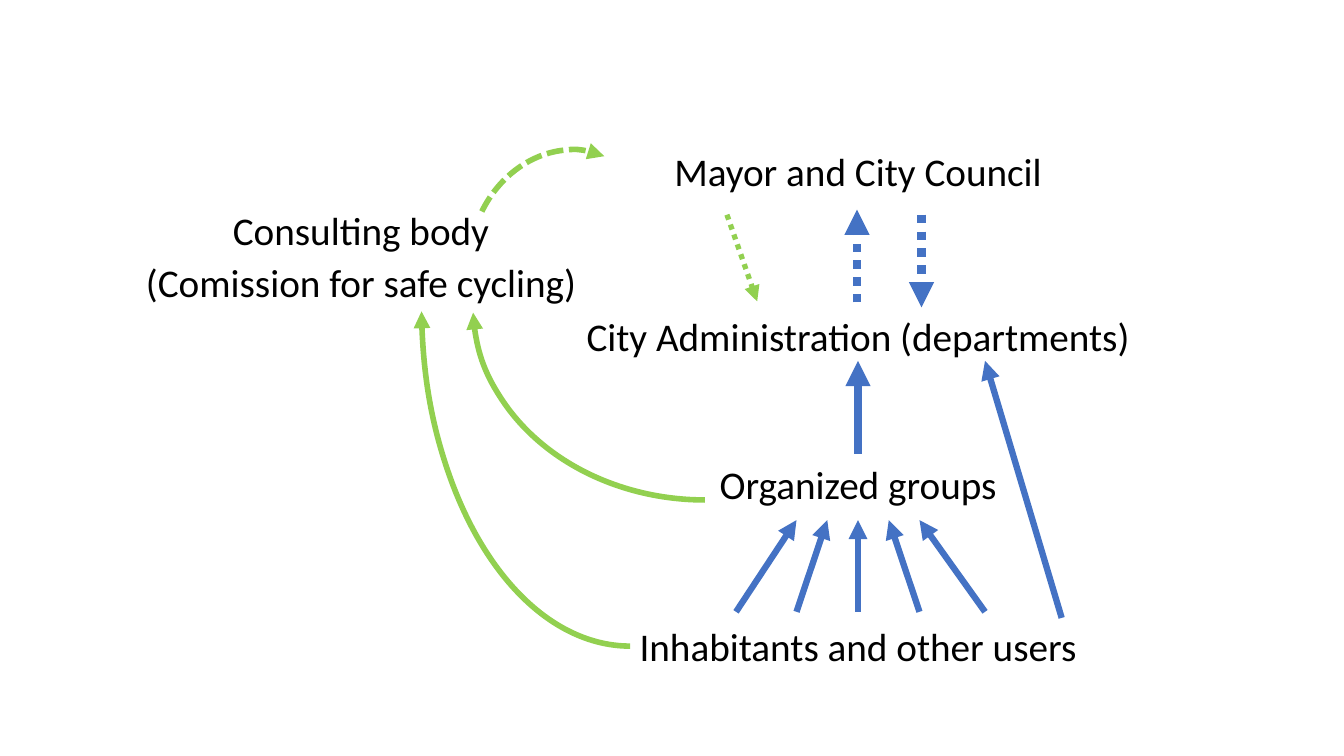
from collections import namedtuple
from dataclasses import dataclass

from pptx import Presentation
from pptx.dml.color import RGBColor
from pptx.enum.dml import MSO_LINE
from pptx.enum.shapes import MSO_CONNECTOR, MSO_SHAPE
from pptx.enum.text import MSO_ANCHOR, MSO_AUTO_SIZE, PP_ALIGN
from pptx.oxml.ns import qn
from pptx.oxml.xmlchemy import OxmlElement
from pptx.util import Inches, Pt

Box = namedtuple("Box", "left top width height")


@dataclass(frozen=True)
class Theme:
    """Colours, type and line weights of the slide."""
    font: str = "Calibri"
    size: float = 28
    text: RGBColor = RGBColor(0x00, 0x00, 0x00)
    civic: RGBColor = RGBColor(0x44, 0x72, 0xC4)
    advisory: RGBColor = RGBColor(0x92, 0xD0, 0x50)
    heavy: float = 6
    medium: float = 4.5
    curve: float = 4
    fine: float = 3.75


THEME = Theme()


def place(shape, box):
    """Move a shape to a box given in inches."""
    shape.left, shape.top, shape.width, shape.height = map(Inches, box)


def write_label(label, box, lines, spacing=0.9):
    """Fill a text shape with centred lines."""
    place(label, box)
    frame = label.text_frame
    frame.text = "\n".join(lines)
    frame.word_wrap = True
    frame.auto_size = MSO_AUTO_SIZE.NONE
    frame.vertical_anchor = MSO_ANCHOR.TOP
    for paragraph in frame.paragraphs:
        paragraph.alignment = PP_ALIGN.CENTER
        paragraph.line_spacing = spacing
        paragraph.space_before = Pt(10)
        paragraph.font.name = THEME.font
        paragraph.font.size = Pt(THEME.size)
        paragraph.font.color.rgb = THEME.text


def add_label(slide, box, lines, spacing=0.9):
    """Add a centred text box."""
    label = slide.shapes.add_textbox(*map(Inches, box))
    write_label(label, box, lines, spacing)


def style_arrow(arrow, color, weight, dash=None):
    """Give a line or arc its stroke and a triangular head, without shadow."""
    arrow.line.color.rgb = color
    arrow.line.width = Pt(weight)
    if dash is not None:
        arrow.line.dash_style = dash
    properties = arrow.element.spPr
    head = OxmlElement("a:tailEnd")
    head.set("type", "triangle")
    properties.find(qn("a:ln")).append(head)
    properties.append(OxmlElement("a:effectLst"))


def add_arrow(slide, start, end, color, weight, dash=None):
    """Add a straight arrow between two points in inches."""
    arrow = slide.shapes.add_connector(
        MSO_CONNECTOR.STRAIGHT, *map(Inches, (*start, *end)))
    style_arrow(arrow, color, weight, dash)


def add_curve(slide, box, rotation, dash=None):
    """Add a quarter-ellipse arrow inside a box."""
    curve = slide.shapes.add_shape(MSO_SHAPE.ARC, *map(Inches, box))
    curve.adjustments[0] = 162
    curve.adjustments[1] = 214.93
    curve.rotation = rotation
    curve.fill.background()
    style_arrow(curve, THEME.advisory, THEME.curve, dash)


def build_hierarchy(slide, box):
    """Stack the civic levels in a box and link them with arrows."""
    center = box.left + box.width / 2

    def spot(dx, dy):
        return center + dx, box.top + dy

    def level(width, dy, height=0.58):
        return Box(center - width / 2, box.top + dy, width, height)

    write_label(slide.placeholders[1], level(4.05, 0, 0.55),
                ["Mayor and City Council"])
    for caption, width, dy in (
            ("City Administration (departments)", box.width, 1.64),
            ("Organized groups", 5.55, 3.11),
            ("Inhabitants and other users", 5.55, 4.72)):
        add_label(slide, level(width, dy), [caption])

    for index, tail in enumerate((-1.21, -0.61, 0, 0.61, 1.26)):
        add_arrow(slide, spot(tail, 4.61), spot((index - 2) * 0.305, 3.7),
                  THEME.civic, THEME.medium)
    add_arrow(slide, spot(2.02, 4.67), spot(1.26, 2.12),
              THEME.civic, THEME.medium)
    add_arrow(slide, spot(0, 3.04), spot(0, 2.12), THEME.civic, THEME.heavy)

    dots = MSO_LINE.ROUND_DOT
    add_arrow(slide, spot(-0.01, 1.54), spot(-0.01, 0.62),
              THEME.civic, THEME.heavy, dots)
    add_arrow(slide, spot(0.63, 0.67), spot(0.63, 1.59),
              THEME.civic, THEME.heavy, dots)
    add_arrow(slide, spot(-1.3, 0.67), spot(-1, 1.53),
              THEME.advisory, THEME.fine, dots)


def build_consulting(slide, box):
    """Label the consulting body in a box and draw its curved links."""
    add_label(slide, box,
              ["Consulting body", "(Comission for safe cycling)"], 0.8)
    for dx, dy, width, height, rotation, dash in (
            (2.88, -2.45, 4.14, 6.77, 180, None),
            (3.39, -0.99, 4.6, 3.86, 180, None),
            (3.25, -0.49, 2.05, 1.77, 295.9, MSO_LINE.SQUARE_DOT)):
        add_curve(slide, Box(box.left + dx, box.top + dy, width, height),
                  rotation, dash)


def main():
    """Build and save the slide."""
    deck = Presentation()
    deck.slide_width, deck.slide_height = Inches(13.33), Inches(7.5)
    slide = deck.slides.add_slide(deck.slide_layouts.get_by_name("Section Header"))
    title = slide.shapes.title.element
    title.getparent().remove(title)
    build_hierarchy(slide, Box(5.55, 1.46, 5.92, 5.3))
    build_consulting(slide, Box(1.3, 2.09, 4.56, 1.02))
    deck.save("out.pptx")


if __name__ == "__main__":
    main()
